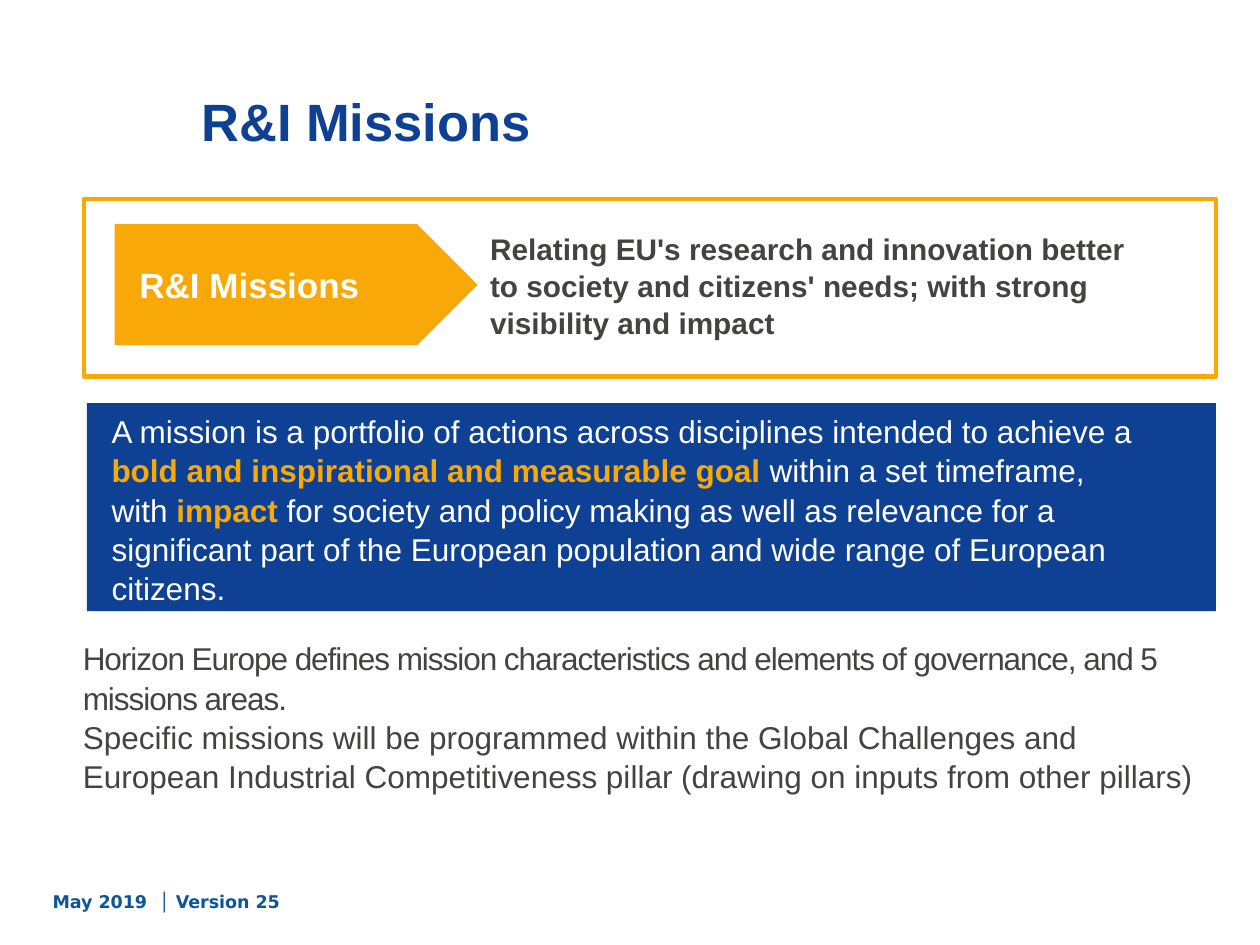
from pptx import Presentation
from pptx.dml.color import RGBColor
from pptx.enum.shapes import MSO_SHAPE
from pptx.enum.text import MSO_ANCHOR, PP_ALIGN
from pptx.util import Cm, Pt

BLUE = RGBColor(0x0E, 0x41, 0x94)
FOOTER_BLUE = RGBColor(0x0F, 0x54, 0x94)
ORANGE = RGBColor(0xF8, 0xA9, 0x07)
GREY = RGBColor(0x44, 0x43, 0x42)
WHITE = RGBColor(0xFF, 0xFF, 0xFF)

RECT, PENTAGON = MSO_SHAPE.RECTANGLE, MSO_SHAPE.PENTAGON
TOP, MIDDLE = MSO_ANCHOR.TOP, MSO_ANCHOR.MIDDLE
LEFT = PP_ALIGN.LEFT
LINE_SPACING = 1.04


def format_runs(p, size, color, bold=False, font="Arial"):
    p.alignment = LEFT
    for r in p.runs:
        r.font.name, r.font.size, r.font.bold = font, Pt(size), bold
        r.font.color.rgb = color


def set_frame(tf, anchor, insets=(0.25, 0.13, 0.25, 0.13)):
    tf.word_wrap = True
    tf.vertical_anchor = anchor
    (tf.margin_left, tf.margin_top,
     tf.margin_right, tf.margin_bottom) = map(Cm, insets)
    return tf


def add_box(s, kind, box, fill, line=None):
    sp = s.shapes.add_shape(kind, *map(Cm, box))
    sp.shadow.inherit = False
    sp.fill.solid()
    sp.fill.fore_color.rgb = fill
    if line is None:
        sp.line.fill.background()
    else:
        sp.line.color.rgb = line
        sp.line.width = Pt(2.5)
    return sp


def add_text(s, box, paragraphs, size, color, bold=False, font="Arial",
             anchor=TOP, spacing=LINE_SPACING):
    tf = set_frame(s.shapes.add_textbox(*map(Cm, box)).text_frame, anchor)
    tf.text = "\n".join(paragraphs)
    for p in tf.paragraphs:
        p.line_spacing = spacing
        format_runs(p, size, color, bold, font)
    return tf


def add_title(s, text):
    title = s.shapes.title
    title.left, title.top = Cm(3.81), Cm(1.55)
    title.width, title.height = Cm(22.63), Cm(2.01)
    tf = set_frame(title.text_frame, TOP, (0.25, 0.24, 0.25, 0.13))
    tf.text = text
    format_runs(tf.paragraphs[0], 30, BLUE, True)


def add_definition(s, box, parts):
    """Blue panel; each part is (text, highlighted), newline = line break."""
    sp = add_box(s, RECT, box, BLUE)
    p = set_frame(sp.text_frame, MIDDLE, (0.5, 0.2, 0.4, 0.13)).paragraphs[0]
    p.line_spacing = LINE_SPACING
    for text, _ in parts:
        for i, piece in enumerate(text.split("\n")):
            if i:
                p.add_line_break()
            p.add_run().text = piece
    format_runs(p, 18, WHITE)
    highlights = [text for text, highlighted in parts if highlighted]
    for r in p.runs:
        if r.text in highlights:
            r.font.bold = True
            r.font.color.rgb = ORANGE


def main():
    prs = Presentation()
    prs.slide_width, prs.slide_height = Cm(25.4), Cm(19.05)
    s = prs.slides.add_slide(prs.slide_layouts[5])

    # Footer and title
    add_text(s, (0.81, 17.83, 6.68, 0.69), ["May 2019  │ Version 25"],
             10, FOOTER_BLUE, True, "DejaVu Sans", spacing=1.0)
    add_title(s, "R&I Missions")

    # Framed arrow with its statement
    add_box(s, RECT, (1.7, 4.01, 22.81, 3.58), WHITE, ORANGE)
    arrow = add_box(s, PENTAGON, (2.31, 4.52, 7.32, 2.44), ORANGE)
    tf = set_frame(arrow.text_frame, MIDDLE, (0.5, 0.13, 0.25, 0.13))
    tf.text = "R&I Missions"
    format_runs(tf.paragraphs[0], 20, WHITE, True)
    add_text(s, (9.63, 4.24, 14.81, 3),
             ["Relating EU's research and innovation better \vto society and "
              "citizens' needs; with strong visibility and impact"],
             17, GREY, True, anchor=MIDDLE)

    # Programme notes, the first one condensed
    tf = add_text(s, (1.42, 12.73, 23.01, 3.5),
                  ["Horizon Europe defines mission characteristics and elements "
                   "of governance, and 5 missions areas.",
                   "Specific missions will be programmed within the Global "
                   "Challenges and European Industrial Competitiveness pillar "
                   "(drawing on inputs from other pillars)"],
                  18, GREY)
    for r in tf.paragraphs[0].runs:
        r.font._element.set("spc", "-60")

    # Definition of a mission
    add_definition(s, (1.75, 8.13, 22.76, 4.19), [
        ("A mission is a portfolio of actions across disciplines intended to "
         "achieve a ", False),
        ("bold and inspirational and measurable goal ", True),
        ("within a set timeframe, \nwith ", False),
        ("impact ", True),
        ("for society and policy making as well as relevance for a significant "
         "part of the European population and wide range of European citizens.",
         False),
    ])

    prs.save("out.pptx")


if __name__ == "__main__":
    main()
